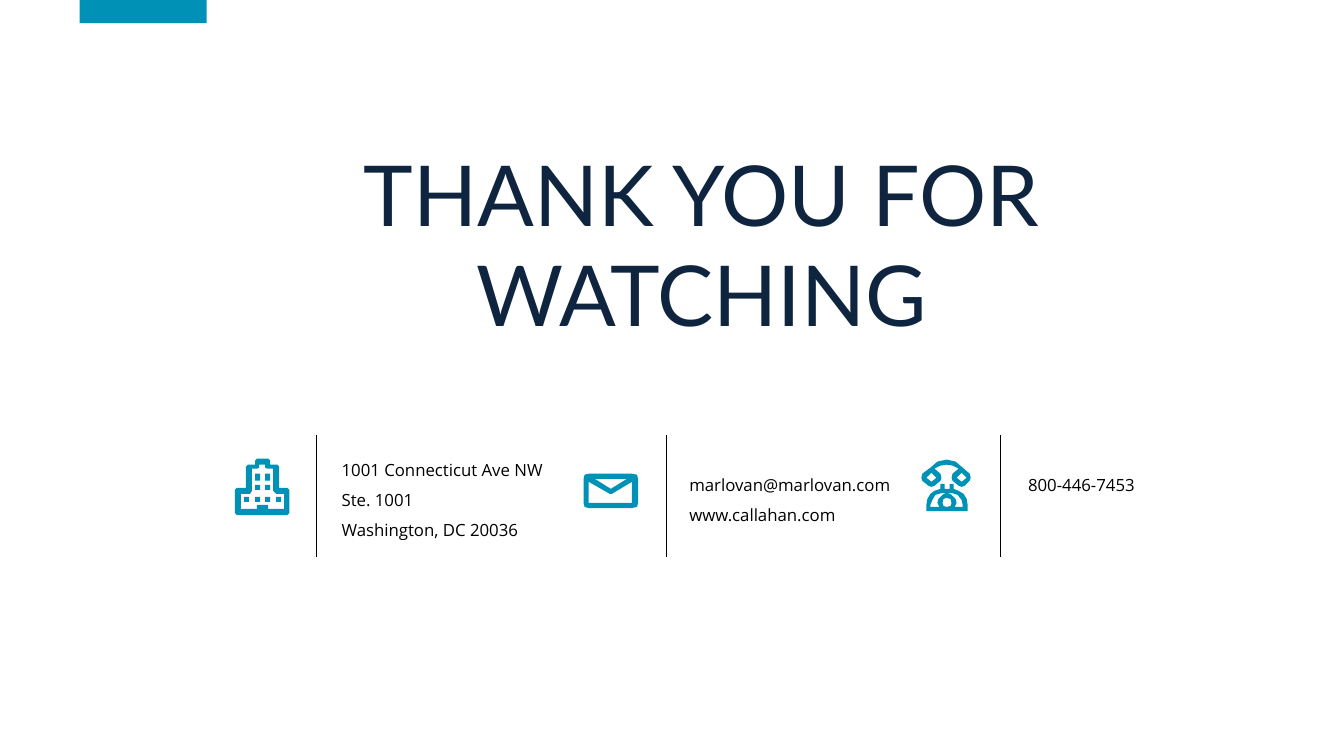
from dataclasses import dataclass

from lxml.etree import SubElement
from pptx import Presentation
from pptx.dml.color import RGBColor as RGB
from pptx.enum.shapes import MSO_CONNECTOR as CONN, MSO_SHAPE as SHAPE
from pptx.enum.text import MSO_ANCHOR as ANCHOR, MSO_AUTO_SIZE as FIT, PP_ALIGN as ALIGN
from pptx.oxml.ns import qn
from pptx.util import Inches, Pt

COLS, ROWS = 80, 45


@dataclass
class Theme:
    accent = RGB(0x00, 0x92, 0xB6)
    title = RGB(0x0F, 0x25, 0x3F)
    ink = RGB(0, 0, 0)
    title_font, title_size = "Lato", Pt(60)
    body_font, body_size = "Open Sans", Pt(12)
    title_indent = Inches(0.5)
    rule = Pt(0.75)
    icon_unit = Inches(0.01)


class Deck:
    def __init__(self, prs, theme):
        self.prs, self.t = prs, theme
        self.s = prs.slides.add_slide(prs.slide_layouts[5])

    def x(self, col):
        return round(col * self.prs.slide_width / COLS)

    def y(self, row):
        return round(row * self.prs.slide_height / ROWS)

    def box(self, col, row, cols, rows):
        return self.x(col), self.y(row), self.x(cols), self.y(rows)

    def paint(self, sp):
        sp.shadow.inherit = False
        sp.fill.solid()
        sp.fill.fore_color.rgb = self.t.accent
        sp.line.fill.background()

    def run(self, p, text, font, size, color):
        r = p.add_run()
        r.text = text
        r.font.name, r.font.size = font, size
        r.font.color.rgb = color

    def title(self, text, *cells):
        sp = self.s.shapes.title
        sp.left, sp.top, sp.width, sp.height = self.box(*cells)
        tf = sp.text_frame
        tf.word_wrap, tf.auto_size = True, FIT.NONE
        tf.vertical_anchor = ANCHOR.TOP
        p = tf.paragraphs[0]
        p.alignment, p.line_spacing = ALIGN.CENTER, 1.0
        pPr = p._p.get_or_add_pPr()
        pPr.set("marL", str(self.t.title_indent))
        pPr.set("indent", "0")
        self.run(p, text, self.t.title_font, self.t.title_size, self.t.title)

    def text(self, lines, *cells):
        tf = self.s.shapes.add_textbox(*self.box(*cells)).text_frame
        tf.word_wrap = True
        for i, line in enumerate(lines):
            p = tf.add_paragraph() if i else tf.paragraphs[0]
            p.line_spacing = 1.5
            self.run(p, line, self.t.body_font, self.t.body_size, self.t.ink)

    def bar(self, *cells):
        self.paint(self.s.shapes.add_shape(SHAPE.RECTANGLE, *self.box(*cells)))

    def divider(self, col, top, bottom):
        x = self.x(col)
        ln = self.s.shapes.add_connector(CONN.STRAIGHT, x, self.y(top), x, self.y(bottom))
        ln.line.color.rgb, ln.line.width = self.t.ink, self.t.rule
        SubElement(ln._element.spPr, qn("a:effectLst"))

    def icon(self, parts, panes, col, row):
        """Parts are lists of contours; panes are small rectangles, in icon units."""
        shapes = self.s.shapes
        if len(parts) + len(panes) > 1:
            shapes = shapes.add_group_shape().shapes
        x, y, u = self.x(col), self.y(row), self.t.icon_unit
        for px, py, w, h in panes:
            self.paint(shapes.add_shape(SHAPE.RECTANGLE, x + px * u, y + py * u, w * u, h * u))
        for contours in parts:
            fb = shapes.build_freeform(*contours[0][0], scale=u)
            for i, points in enumerate(contours):
                if i:
                    fb.move_to(*points[0])
                fb.add_line_segments(points[1:], close=True)
            self.paint(fb.convert_to_shape(x, y))


# Icon outlines: outer contour first, then the holes
BUILDING = [[
    [(52, 29), (44, 29), (44, 8), (42, 6), (35, 6), (35, 2), (33, 0), (22, 0), (20, 2), (20, 6),
     (13, 6), (11, 8), (11, 29), (2, 29), (0, 31), (0, 54), (2, 56), (52, 56), (54, 54), (54, 31)],
    [(49, 50), (33, 50), (33, 46), (22, 46), (22, 50), (6, 50), (6, 35), (15, 35), (17, 32),
     (17, 10), (22, 10), (24, 9), (24, 6), (30, 6), (30, 9), (32, 10), (38, 10), (38, 32),
     (41, 35), (49, 35)],
]]
WINDOW_ROWS = [(15, 7, (20, 30)), (26, 5, (20, 30)), (38, 5, (9, 20, 30, 41))]
WINDOWS = [(x, y, 5, h) for y, h, xs in WINDOW_ROWS for x in xs]

ENVELOPE = [[
    [(48, 0), (5, 0), (1, 1), (0, 5), (0, 29), (1, 33), (5, 34), (48, 34), (53, 33), (54, 29),
     (54, 5), (53, 1)],
    [(43, 5), (27, 15), (11, 5)],
    [(5, 29), (5, 8), (26, 20), (28, 20), (48, 8), (48, 29)],
]]

PHONE_BASE = [
    [(32, 29), (32, 24), (28, 24), (28, 29), (23, 29), (23, 24), (19, 24), (19, 29), (13, 31),
     (9, 34), (6, 39), (5, 45), (5, 51), (46, 51), (46, 45), (45, 39), (42, 34), (37, 31)],
    [(21, 43), (22, 39), (25, 38), (29, 39), (30, 43), (29, 46), (25, 47), (22, 46)],
    [(41, 47), (33, 47), (35, 43), (34, 39), (29, 34), (25, 33), (22, 34), (17, 39), (16, 43),
     (18, 47), (9, 47), (9, 45), (11, 40), (14, 35), (21, 33), (30, 33), (36, 35), (40, 40),
     (41, 45)],
]
HANDSET = [
    [(48, 14), (41, 8), (34, 2), (25, 0), (16, 2), (9, 8), (1, 14), (0, 18), (1, 21), (7, 26),
     (10, 27), (13, 26), (19, 21), (20, 18), (19, 14), (13, 9), (19, 6), (25, 5), (31, 6),
     (37, 9), (31, 14), (30, 18), (31, 21), (37, 26), (40, 27), (43, 26), (48, 21), (49, 18)],
    *[[(x, 18), (x + 5, 13), (x + 10, 18), (x + 5, 22)] for x in (5, 35)],
]

# Contacts: icon, its panes, its place; divider column; lines and their box
CONTACTS = [
    (BUILDING, WINDOWS, (13.98, 27.3), 18.84,
     ["1001 Connecticut Ave NW", "Ste. 1001", "Washington, DC 20036"],
     (19.74, 26.46, 14.58, 5.88)),
    (ENVELOPE, [], (34.74, 28.2), 39.66,
     ["marlovan@marlovan.com", "www.callahan.com"],
     (40.44, 27.36, 13.68, 4.02)),
    ([PHONE_BASE, HANDSET], [], (54.84, 27.36), 59.58,
     ["800-446-7453"],
     (60.6, 27.36, 8.64, 2.22)),
]


def main():
    prs = Presentation()
    prs.slide_width, prs.slide_height = Inches(13.33), Inches(7.5)
    deck = Deck(prs, Theme())

    # Top accent and closing title
    deck.bar(4.74, 0, 7.56, 1.38)
    deck.title("THANK YOU FOR WATCHING", 15.06, 8.16, 50.4, 12.72)

    # Contact row
    for parts, panes, place, rule_col, lines, cells in CONTACTS:
        deck.icon(parts, panes, *place)
        deck.divider(rule_col, 25.92, 33.18)
        deck.text(lines, *cells)

    prs.save("out.pptx")


if __name__ == "__main__":
    main()
